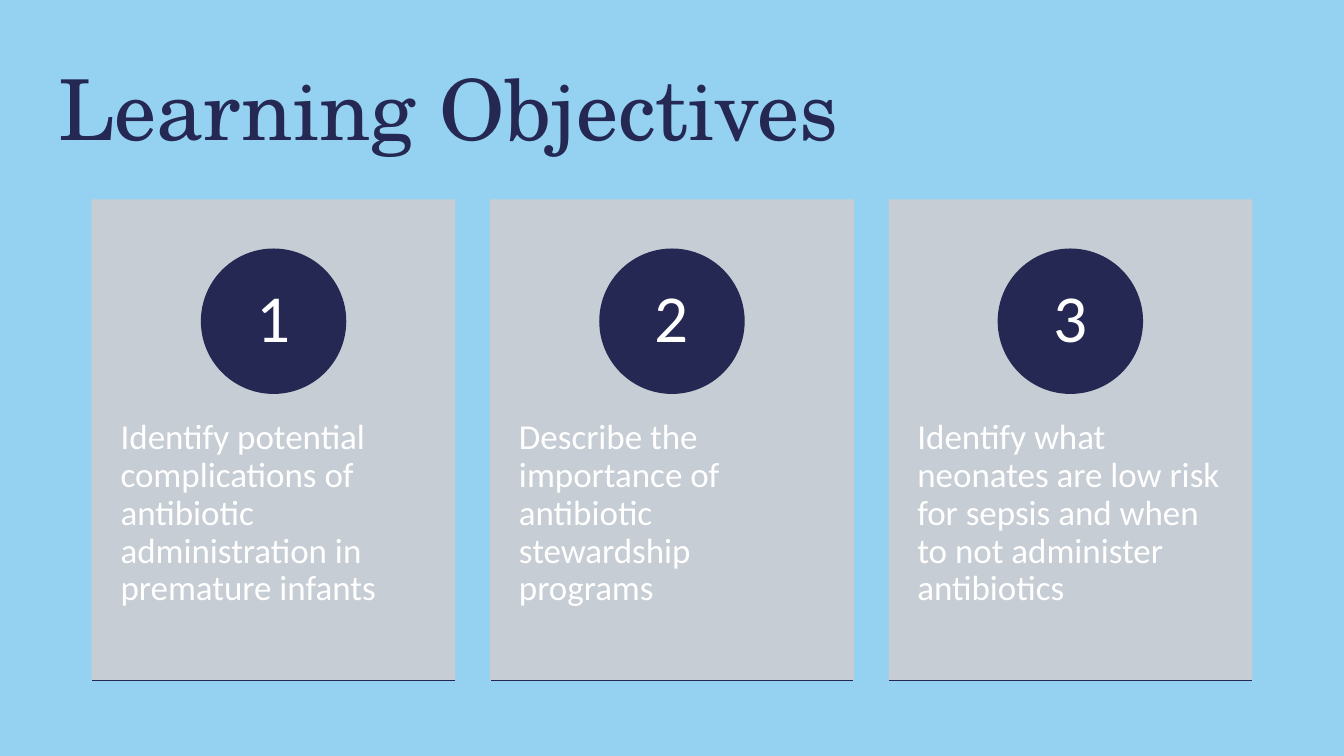
from dataclasses import dataclass

import lxml.etree
import pptx
import pptx.dml.color
import pptx.enum.shapes
import pptx.enum.text
import pptx.oxml.ns
import pptx.util
from pptx.util import Cm

COLOURS = {"sky": "95D1F1", "navy": "242852", "card": "CDCDD1", "white": "FFFFFF"}

# Card grid, in centimetres
FIRST_LEFT, CARD_TOP = 2.33, 5.04
CARD_WIDTH, CARD_HEIGHT = 9.13, 12.1
CARD_PITCH = 10.04
CIRCLE_TOP, CIRCLE_SIZE = 6.28, 3.63
NUMBER_SIZE = 2.57
TEXT_TOP, TEXT_HEIGHT = 9.66, 7.26


@dataclass
class Objective:
    number: int
    text: str


@dataclass
class TextStyle:
    font: str
    size: int
    colour: str
    alignment: pptx.enum.text.PP_ALIGN
    anchor: pptx.enum.text.MSO_ANCHOR


LEFT, CENTER = pptx.enum.text.PP_ALIGN.LEFT, pptx.enum.text.PP_ALIGN.CENTER
ANCHOR = pptx.enum.text.MSO_ANCHOR
TITLE_STYLE = TextStyle("TeX Gyre Schola", 60, "navy", LEFT, ANCHOR.BOTTOM)
NUMBER_STYLE = TextStyle("Calibri", 48, "white", CENTER, ANCHOR.MIDDLE)
BODY_STYLE = TextStyle("Calibri", 25, "white", LEFT, ANCHOR.TOP)

OBJECTIVES = [
    Objective(1, "Identify potential complications of antibiotic administration in premature infants"),
    Objective(2, "Describe the importance of antibiotic stewardship programs"),
    Objective(3, "Identify what neonates are low risk for sepsis and when to not administer antibiotics"),
]


def rgb(name: str) -> pptx.dml.color.RGBColor:
    return pptx.dml.color.RGBColor.from_string(COLOURS[name])


def write_text(frame, text: str, style: TextStyle) -> None:
    frame.word_wrap = True
    frame.vertical_anchor = style.anchor
    paragraph = frame.paragraphs[0]
    paragraph.text = text
    paragraph.alignment = style.alignment
    paragraph.line_spacing = 0.9
    paragraph.font.name = style.font
    paragraph.font.size = pptx.util.Pt(style.size)
    paragraph.font.color.rgb = rgb(style.colour)


def add_text(slide, box: tuple, text: str, style: TextStyle, inset_x: float, inset_y: float) -> None:
    frame = slide.shapes.add_textbox(*map(Cm, box)).text_frame
    frame.margin_left = frame.margin_right = Cm(inset_x)
    frame.margin_top = frame.margin_bottom = Cm(inset_y)
    write_text(frame, text, style)


def add_filled(slide, kind, box: tuple, colour: str, opacity: int = 100) -> None:
    shape = slide.shapes.add_shape(kind, *map(Cm, box))
    shape.shadow.inherit = False
    shape.fill.solid()
    shape.fill.fore_color.rgb = rgb(colour)
    shape.line.color.rgb = rgb(colour)
    shape.line.width = pptx.util.Pt(1)
    if opacity < 100:
        for element in shape._element.spPr.iter(pptx.oxml.ns.qn("a:srgbClr")):
            alpha = lxml.etree.SubElement(element, pptx.oxml.ns.qn("a:alpha"))
            alpha.set("val", str(opacity * 1000))


def add_base_line(slide, left: float) -> None:
    bottom = Cm(CARD_TOP + CARD_HEIGHT)
    line = slide.shapes.add_connector(
        pptx.enum.shapes.MSO_CONNECTOR.STRAIGHT, Cm(left), bottom, Cm(left + CARD_WIDTH), bottom)
    line.line.color.rgb = rgb("navy")
    line.line.width = pptx.util.Pt(1)
    lxml.etree.SubElement(line._element.spPr, pptx.oxml.ns.qn("a:effectLst"))


def add_card(slide, left: float, objective: Objective) -> None:
    shapes = pptx.enum.shapes.MSO_SHAPE
    add_filled(slide, shapes.RECTANGLE, (left, CARD_TOP, CARD_WIDTH, CARD_HEIGHT), "card", 90)
    add_text(slide, (left, TEXT_TOP, CARD_WIDTH, TEXT_HEIGHT), objective.text, BODY_STYLE, 0.71, 0.91)

    # Numbered circle, centred across the card
    circle_left = left + (CARD_WIDTH - CIRCLE_SIZE) / 2
    add_filled(slide, shapes.OVAL, (circle_left, CIRCLE_TOP, CIRCLE_SIZE, CIRCLE_SIZE), "navy")
    offset = (CIRCLE_SIZE - NUMBER_SIZE) / 2
    add_text(slide, (circle_left + offset, CIRCLE_TOP + offset, NUMBER_SIZE, NUMBER_SIZE),
             str(objective.number), NUMBER_STYLE, 0.28, 0.03)

    add_base_line(slide, left)


def main() -> None:
    presentation = pptx.Presentation()
    presentation.slide_width, presentation.slide_height = Cm(33.87), Cm(19.05)
    slide = presentation.slides.add_slide(presentation.slide_layouts[5])

    # Background
    slide.background.fill.solid()
    slide.background.fill.fore_color.rgb = rgb("sky")

    # Title
    title = slide.shapes.title
    title.left, title.top, title.width, title.height = map(Cm, (1.22, 1.55, 31.39, 2.57))
    write_text(title.text_frame, "Learning Objectives", TITLE_STYLE)
    title.text_frame.auto_size = pptx.enum.text.MSO_AUTO_SIZE.SHAPE_TO_FIT_TEXT

    # Objective cards
    for index, objective in enumerate(OBJECTIVES):
        add_card(slide, FIRST_LEFT + index * CARD_PITCH, objective)

    presentation.save("out.pptx")


if __name__ == "__main__":
    main()
